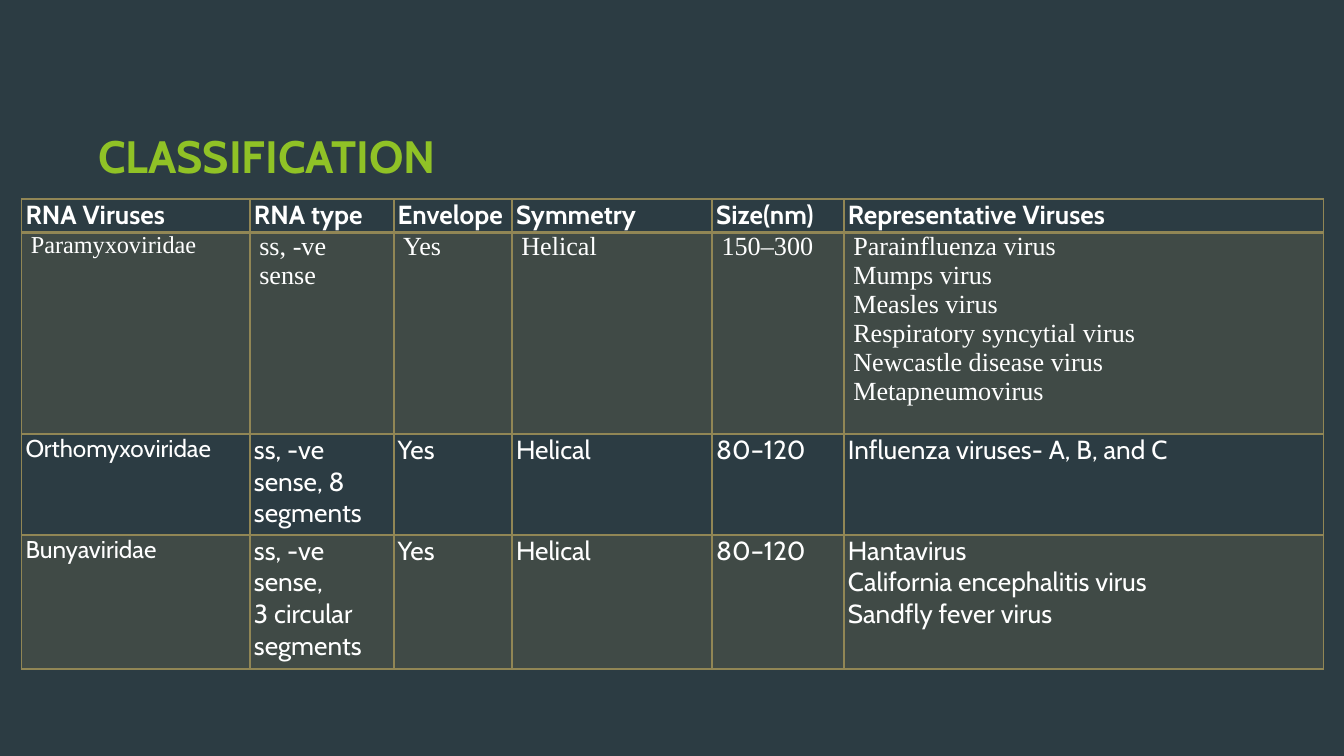
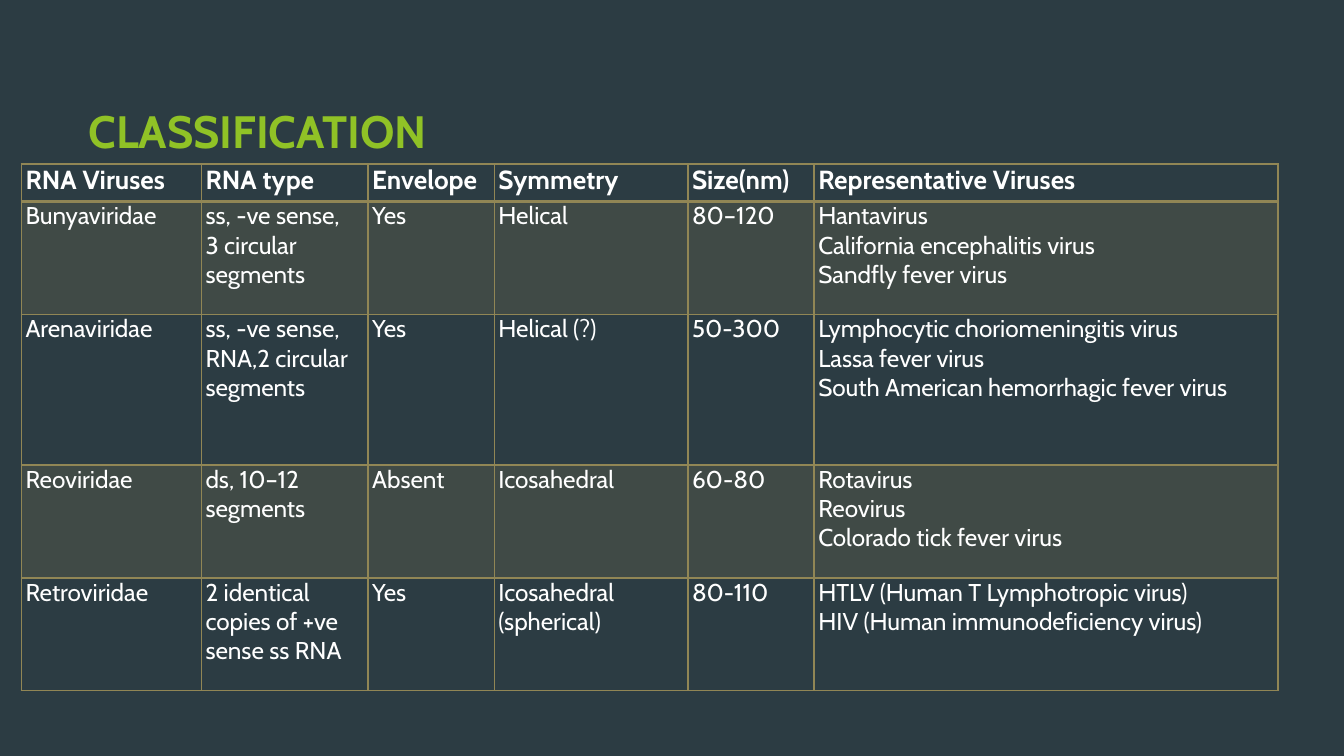
from pptx import Presentation
from pptx.dml.color import RGBColor
from pptx.enum.text import MSO_ANCHOR, MSO_AUTO_SIZE, PP_ALIGN
from pptx.oxml.ns import qn
from pptx.util import Inches, Pt
from lxml.etree import SubElement

SLATE = RGBColor(0x2C, 0x3C, 0x43)
GREEN = RGBColor(0x90, 0xC2, 0x26)
GOLD = RGBColor(0x91, 0x86, 0x55)
WHITE = RGBColor(0xFF, 0xFF, 0xFF)

SANS = "Cabin"
SERIF = "Times New Roman"
BAND_OPACITY = 20
TABLE_LEFT = 0.16
TITLE_ONLY = 5

HEADINGS = ("RNA Viruses", "RNA type", "Envelope", "Symmetry", "Size(nm)",
            "Representative Viruses")

PARAMYXO = ("Paramyxoviridae", "ss, -ve sense", "Yes", "Helical", "150–300",
            "Parainfluenza virus\nMumps virus\nMeasles virus\n"
            "Respiratory syncytial virus\nNewcastle disease virus\nMetapneumovirus")
ORTHOMYXO = ("Orthomyxoviridae", "ss, -ve sense, 8 segments", "Yes", "Helical",
             "80–120", "Influenza viruses- A, B, and C")
BUNYA = ("Bunyaviridae", "ss, -ve sense,\n3 circular segments", "Yes", "Helical",
         "80–120", "Hantavirus\nCalifornia encephalitis virus\nSandfly fever virus")
ARENA = ("Arenaviridae", "ss, -ve sense, RNA,2 circular segments", "Yes",
         "Helical (?)", "50-300",
         "Lymphocytic choriomeningitis virus\nLassa fever virus\n"
         "South American hemorrhagic fever virus")
REO = ("Reoviridae", "ds, 10–12 segments", "Absent", "Icosahedral", "60-80",
       "Rotavirus\nReovirus\nColorado tick fever virus")
RETRO = ("Retroviridae", "2 identical copies of +ve sense ss RNA", "Yes",
         "Icosahedral (spherical)", "80-110",
         "HTLV (Human T Lymphotropic virus)\nHIV (Human immunodeficiency virus)")


def set_title(slide, left, top):
    title = slide.shapes.title
    title.left, title.top = Inches(left), Inches(top)
    title.width, title.height = Inches(7.05), Inches(1.08)
    frame = title.text_frame
    frame.text = "CLASSIFICATION"
    frame.auto_size = MSO_AUTO_SIZE.NONE
    frame.vertical_anchor = MSO_ANCHOR.BOTTOM
    frame.margin_left, frame.margin_bottom = Inches(0.17), Inches(0.22)
    heading = frame.paragraphs[0]
    heading.alignment = PP_ALIGN.LEFT
    style_font(heading.font, 24.3, SANS, GREEN, True)


def style_font(font, size, name, color=WHITE, bold=False):
    font.size, font.name, font.bold = Pt(size), name, bold
    font.color.rgb = color


def set_borders(cell, top=1, bottom=1):
    properties = cell._tc.get_or_add_tcPr()
    for side, width in (("L", 1), ("R", 1), ("T", top), ("B", bottom)):
        line = SubElement(properties, qn(f"a:ln{side}"), w=str(Pt(width)))
        paint = SubElement(line, qn("a:solidFill"))
        SubElement(paint, qn("a:srgbClr"), val=str(GOLD))


def set_band(cell, banded):
    if not banded:
        cell.fill.background()
        return
    cell.fill.solid()
    cell.fill.fore_color.rgb = GOLD
    color = cell._tc.tcPr.find(qn("a:solidFill"))[0]
    SubElement(color, qn("a:alpha"), val=str(BAND_OPACITY * 1000))


def write_cell(cell, text, size, font_name=SANS, bold=False):
    cell.text = text
    side_margin = 0.07 if font_name == SERIF else 0.03
    cell.margin_left = cell.margin_right = Inches(side_margin)
    cell.margin_top = cell.margin_bottom = 0
    for paragraph in cell.text_frame.paragraphs:
        style_font(paragraph.font, size, font_name, bold=bold)


def add_virus_table(slide, top, widths, heights, families, family_size, detail_size):
    rows = (HEADINGS, *families)
    table = slide.shapes.add_table(
        len(rows), len(HEADINGS), Inches(TABLE_LEFT), Inches(top),
        Inches(sum(widths)), Inches(sum(heights))).table
    table.first_row = table.horz_banding = False
    for column, width in zip(table.columns, widths):
        column.width = Inches(width)
    for row, height in zip(table.rows, heights):
        row.height = Inches(height)

    for r, entries in enumerate(rows):
        is_header = r == 0
        font_name = SERIF if entries is PARAMYXO else SANS
        for c, entry in enumerate(entries):
            cell = table.cell(r, c)
            size = 14 if is_header else family_size if c == 0 else detail_size
            write_cell(cell, entry, size, font_name, is_header)
            set_borders(cell, top=2 if r == 1 else 1, bottom=2 if is_header else 1)
            set_band(cell, r % 2 == 1)


def main():
    deck = Presentation()
    deck.slide_width = Inches(10)
    deck.slide_height = deck.slide_width * 9 // 16
    backdrop = deck.slide_master.background.fill
    backdrop.solid()
    backdrop.fore_color.rgb = SLATE
    layout = deck.slide_layouts[TITLE_ONLY]

    negative_sense = deck.slides.add_slide(layout)
    set_title(negative_sense, 0.56, 0.5)
    add_virus_table(negative_sense, 1.48, (1.7, 1.07, 0.88, 1.49, 0.98, 3.57),
                    (0.25, 1.5, 0.75, 1), (PARAMYXO, ORTHOMYXO, BUNYA), 13, 14)

    further_families = deck.slides.add_slide(layout)
    set_title(further_families, 0.49, 0.31)
    add_virus_table(further_families, 1.22, (1.34, 1.24, 0.94, 1.44, 0.94, 3.45),
                    (0.28, 0.84, 1.12, 0.84, 0.84), (BUNYA, ARENA, REO, RETRO), 13, 13)

    deck.save("out.pptx")


if __name__ == "__main__":
    main()
